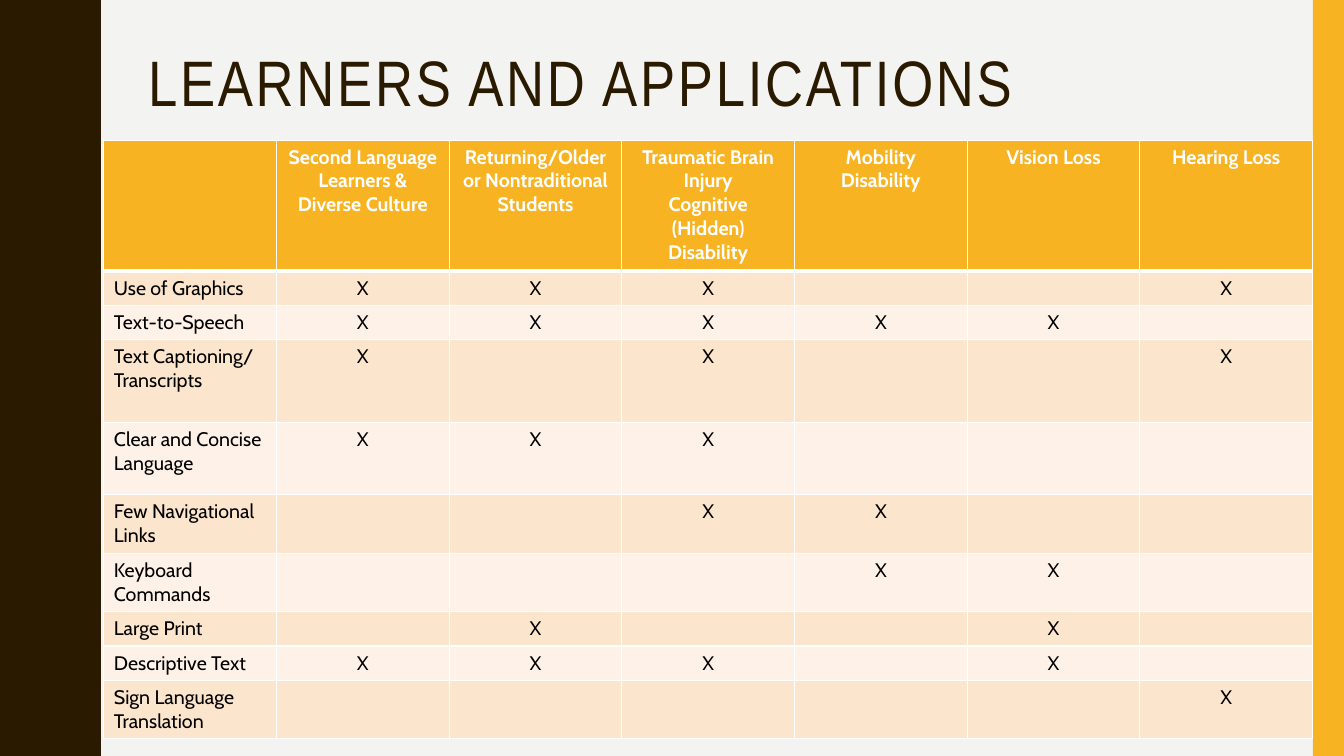
from lxml.etree import SubElement
from pptx import Presentation
from pptx.dml.color import RGBColor
from pptx.enum.shapes import MSO_SHAPE
from pptx.enum.text import MSO_ANCHOR, PP_ALIGN
from pptx.oxml.ns import qn
from pptx.util import Inches, Pt

TITLE = "LEARNERS AND APPLICATIONS"
LEARNERS = [
    "",
    "Second Language Learners & Diverse Culture",
    "Returning/Older or Nontraditional Students",
    "Traumatic Brain Injury\nCognitive (Hidden) Disability",
    "Mobility Disability",
    "Vision Loss",
    "Hearing Loss",
]
APPLICATIONS = [
    ("Use of Graphics", 0.34, {1, 2, 3, 6}),
    ("Text-to-Speech", 0.34, {1, 2, 3, 4, 5}),
    ("Text Captioning/\nTranscripts", 0.82, {1, 3, 6}),
    ("Clear and Concise Language", 0.72, {1, 2, 3}),
    ("Few Navigational Links", 0.58, {3, 4}),
    ("Keyboard Commands", 0.58, {4, 5}),
    ("Large Print", 0.34, {2, 5}),
    ("Descriptive Text", 0.34, {1, 2, 3, 5}),
    ("Sign Language Translation", 0.58, {6}),
]
HEADER_HEIGHT = 1.3

BROWN = RGBColor(0x2A, 0x1A, 0x00)
GOLD = RGBColor(0xF8, 0xB3, 0x23)
PAPER = RGBColor(0xF3, 0xF3, 0xF2)
PEACH = RGBColor(0xFC, 0xE5, 0xCD)
CREAM = RGBColor(0xFE, 0xF2, 0xE8)
WHITE = RGBColor(0xFF, 0xFF, 0xFF)
BLACK = RGBColor(0x00, 0x00, 0x00)

WIDTH, HEIGHT = 13.33, 7.5
BAND_WIDTH = 0.31
TABLE_LEFT, TABLE_TOP, TABLE_WIDTH = 1.03, 1.39, 11.99
WAVES = 5
WAVE_HEIGHT = HEIGHT / WAVES
HALF_WAVE = [
    (0.78, 0), (0.78, 0.07), (0.79, 0.14), (0.8, 0.2), (0.81, 0.25),
    (0.83, 0.29), (0.85, 0.33), (0.87, 0.38), (0.89, 0.42), (0.91, 0.46),
    (0.93, 0.5), (0.95, 0.55), (0.96, 0.61), (0.97, 0.68), (0.97, 0.75),
]


def paint(part, color):
    part.fill.solid()
    part.fill.fore_color.rgb = color
    part.line.fill.background()
    part.shadow.inherit = False


def draw_edges(slide):
    wave = HALF_WAVE + [(x, WAVE_HEIGHT - y) for x, y in reversed(HALF_WAVE[:-1])]
    edge = [(x, y + n * WAVE_HEIGHT) for n in range(WAVES) for x, y in wave]
    outline = slide.shapes.build_freeform(0, 0, scale=Inches(1))
    outline.add_line_segments(edge + [(0, HEIGHT)], close=True)
    paint(outline.convert_to_shape(), BROWN)
    band = slide.shapes.add_shape(
        MSO_SHAPE.RECTANGLE, Inches(WIDTH - BAND_WIDTH), 0,
        Inches(BAND_WIDTH), Inches(HEIGHT))
    paint(band, GOLD)


def draw_title(slide):
    box = slide.shapes.add_textbox(
        Inches(1.37), Inches(0.42), Inches(11.13), Inches(0.86))
    frame = box.text_frame
    frame.word_wrap = True
    frame.vertical_anchor = MSO_ANCHOR.MIDDLE
    heading = frame.paragraphs[0]
    heading.line_spacing = 0.9
    run = heading.add_run()
    run.text = TITLE
    run.font.name = "Arial Narrow"
    run.font.size = Pt(45.9)
    run.font.color.rgb = BROWN
    run.font._element.set("spc", "200")


def set_borders(cell, top, bottom):
    properties = cell._tc.get_or_add_tcPr()
    for side, points in (("L", 1), ("R", 1), ("T", top), ("B", bottom)):
        border = SubElement(properties, qn(f"a:ln{side}"), w=str(Pt(points)))
        fill = SubElement(border, qn("a:solidFill"))
        SubElement(fill, qn("a:srgbClr"), val=str(WHITE))


def fill_cell(cell, text, color, background, bold, alignment):
    cell.fill.solid()
    cell.fill.fore_color.rgb = background
    frame = cell.text_frame
    for number, line in enumerate(text.split("\n")):
        paragraph = frame.add_paragraph() if number else frame.paragraphs[0]
        paragraph.alignment = alignment
        if not line:
            SubElement(paragraph._p, qn("a:endParaRPr"), sz="1400")
            continue
        run = paragraph.add_run()
        run.text = line
        run.font.name = "Cabin"
        run.font.size = Pt(14)
        run.font.bold = bold
        run.font.color.rgb = color


def draw_table(slide):
    heights = [HEADER_HEIGHT] + [height for _, height, _ in APPLICATIONS]
    rows = [LEARNERS] + [
        [name] + ["X" if column in marks else "" for column in range(1, len(LEARNERS))]
        for name, _, marks in APPLICATIONS]
    table = slide.shapes.add_table(
        len(rows), len(LEARNERS), Inches(TABLE_LEFT), Inches(TABLE_TOP),
        Inches(TABLE_WIDTH), Inches(sum(heights))).table
    table.horz_banding = False
    for column in table.columns:
        column.width = Inches(TABLE_WIDTH / len(LEARNERS))
    for r, (texts, height) in enumerate(zip(rows, heights)):
        table.rows[r].height = Inches(height)
        header = r == 0
        background = GOLD if header else PEACH if r % 2 else CREAM
        for c, text in enumerate(texts):
            cell = table.cell(r, c)
            set_borders(cell, 3 if r == 1 else 1, 3 if header else 1)
            fill_cell(cell, text, WHITE if header else BLACK, background, header,
                      PP_ALIGN.CENTER if header or c else PP_ALIGN.LEFT)


def main():
    deck = Presentation()
    deck.slide_width, deck.slide_height = Inches(WIDTH), Inches(HEIGHT)
    slide = deck.slides.add_slide(deck.slide_layouts[6])
    slide.background.fill.solid()
    slide.background.fill.fore_color.rgb = PAPER
    draw_edges(slide)
    draw_title(slide)
    draw_table(slide)
    deck.save("out.pptx")


if __name__ == "__main__":
    main()
